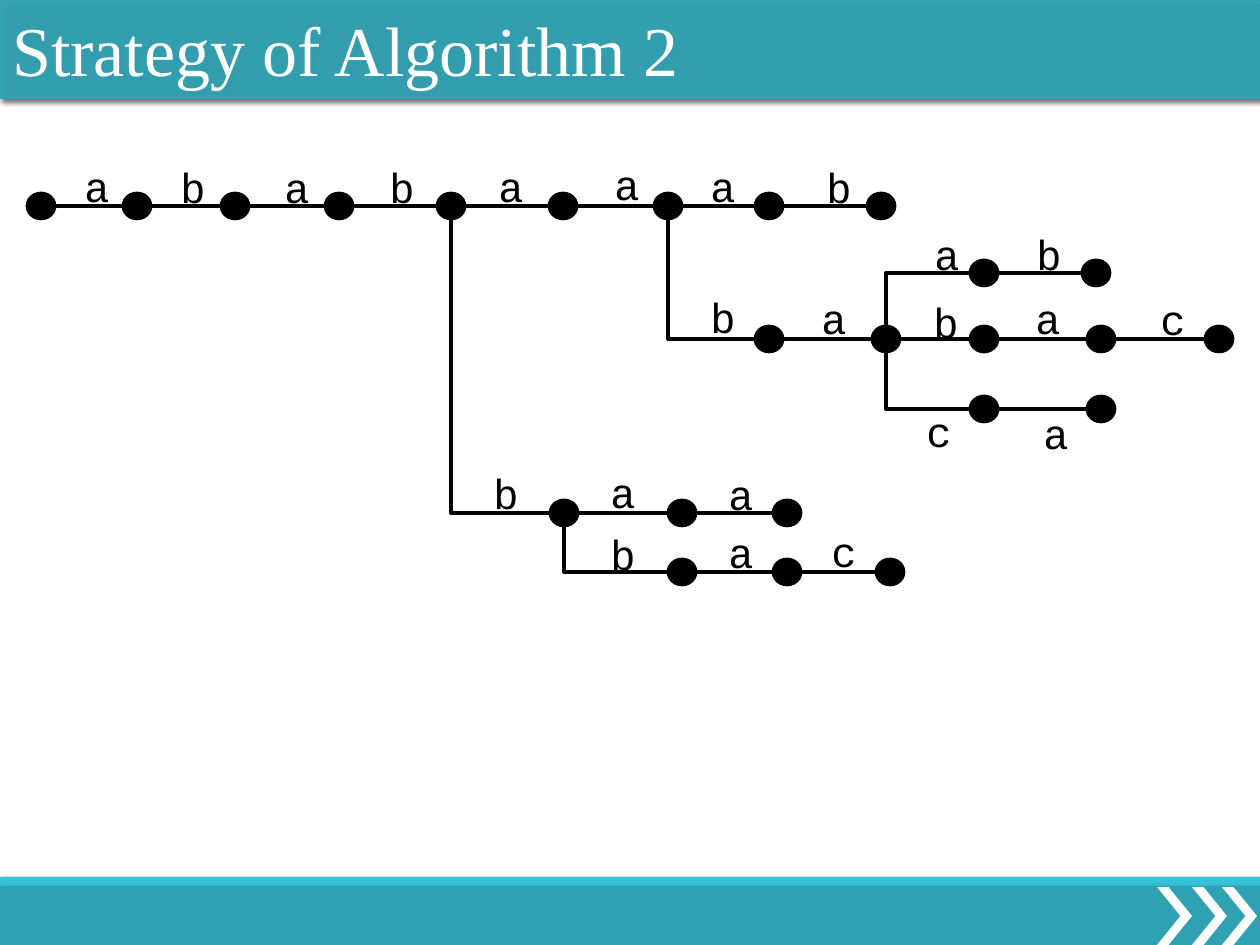
from lxml.etree import SubElement
from pptx import Presentation
from pptx.dml.color import RGBColor
from pptx.enum.shapes import MSO_CONNECTOR as CONN, MSO_SHAPE as SHAPE
from pptx.enum.text import MSO_ANCHOR as ANCHOR, PP_ALIGN as ALIGN
from pptx.oxml.ns import qn
from pptx.util import Pt

W, H = 1260, 945
NODE_W, NODE_H = 29, 27
TEAL, CYAN, WHITE, BLACK = "2EA2B3", "35C1D7", "FFFFFF", "000000"

BRANCHES = [
    ((21, 56), 56, [("a", 117, 52, 4), ("b", 215, 148, 5), ("a", 319, 252, 5),
                    ("b", 431, 357, 5), ("a", 543, 466, 4), ("a", 648, 582, 2),
                    ("a", 749, 678, 4), ("b", 861, 794, 5)]),
    ((648, 56), 189, [("b", 749, 678, 135), ("a", 866, 789, 136), ("b", 964, 901, 140),
                      ("a", 1081, 1003, 136), ("c", 1199, 1128, 137)]),
    ((866, 189), 123, [("a", 964, 902, 72), ("b", 1076, 1004, 72)]),
    ((866, 189), 259, [("c", 964, 894, 249), ("a", 1081, 1011, 251)]),
    ((431, 56), 363, [("b", 544, 461, 311), ("a", 662, 578, 310), ("a", 767, 696, 312)]),
    ((544, 363), 422, [("b", 662, 578, 372), ("a", 767, 696, 370), ("c", 870, 799, 369)]),
]


def px(n):
    """Turn px into EMU."""
    return round(n * 914400 / 126)


def rgb(color):
    """Turn a hex string into a colour."""
    return RGBColor.from_string(color)


def add_shape(s, kind, box, fill, line=None):
    """Add a flat preset shape."""
    sp = s.shapes.add_shape(kind, *map(px, box))
    sp.shadow.inherit = False
    sp.fill.solid()
    sp.fill.fore_color.rgb = rgb(fill)
    if line:
        sp.line.color.rgb = rgb(line)
        sp.line.width = Pt(1)
    else:
        sp.line.fill.background()
    return sp


def add_alpha(parent, percent):
    """Set the opacity of the colour inside a fill or shadow."""
    SubElement(parent.find(qn("a:srgbClr")), qn("a:alpha"), val=str(percent * 1000))


def add_shadow(sp):
    """Give a shape a soft shadow to the lower right."""
    effects = sp._element.spPr.find(qn("a:effectLst"))
    shadow = SubElement(effects, qn("a:outerShdw"), blurRad=str(Pt(3)), dist=str(Pt(2)),
                        dir="2700000", algn="tl", rotWithShape="0")
    SubElement(shadow, qn("a:srgbClr"), val=BLACK)
    add_alpha(shadow, 60)


def add_run(tf, text, size, font, color):
    """Add a run to the first paragraph."""
    p = tf.paragraphs[0]
    p.alignment = ALIGN.LEFT
    r = p.add_run()
    r.text = text
    r.font.size = Pt(size)
    r.font.name = font
    r.font.color.rgb = rgb(color)


def add_edge(s, start, end):
    """Join two points, with a corner when their heights differ."""
    bent = start[1] != end[1]
    kind = CONN.ELBOW if bent else CONN.STRAIGHT
    edge = s.shapes.add_connector(kind, *map(px, (*end, *start)))
    edge.line.color.rgb = rgb(BLACK)
    edge.line.width = Pt(2.25)
    sp_pr = edge._element.spPr
    SubElement(sp_pr, qn("a:effectLst"))
    if bent:
        sp_pr.find(qn("a:prstGeom")).set("prst", "bentConnector2")


def add_node(s, x, y):
    """Add a dot centred on a point."""
    box = (x - NODE_W / 2, y - NODE_H / 2, NODE_W, NODE_H)
    add_shape(s, SHAPE.OVAL, box, BLACK, BLACK)


def add_label(s, x, y, text):
    """Add the letter of an edge."""
    tf = s.shapes.add_textbox(*map(px, (x, y, 50, 63))).text_frame
    tf.word_wrap = False
    add_run(tf, text, 24, "Courier New", BLACK)


def add_tree(s, left, top):
    """Draw the tree of letters branch by branch."""
    root_x, root_y = BRANCHES[0][0]
    add_node(s, left + root_x, top + root_y)
    for (x, y), row, steps in BRANCHES:
        start = left + x, top + y
        for letter, node_x, label_x, label_y in steps:
            end = left + node_x, top + row
            add_edge(s, start, end)
            add_node(s, *end)
            add_label(s, left + label_x, top + label_y, letter)
            start = end


def add_footer(s, left, top, width, height):
    """Draw the bottom bars and chevrons."""
    strip = 10
    add_shadow(add_shape(s, SHAPE.RECTANGLE, (left, top, width, 30), CYAN))
    bar = (left, top + strip, width, height - strip)
    add_shadow(add_shape(s, SHAPE.RECTANGLE, bar, TEAL, TEAL))
    for offset in (103, 68, 38):
        box = (left + width - offset, top + strip, 35, height - strip)
        add_shape(s, SHAPE.CHEVRON, box, WHITE).adjustments[0] = 0.67


def add_title(s, left, top, width, height):
    """Draw the title bar."""
    sp = add_shape(s, SHAPE.RECTANGLE, (left, top, width, height), TEAL, TEAL)
    add_alpha(sp._element.spPr.find(qn("a:solidFill")), 92)
    add_shadow(sp)
    tf = sp.text_frame
    tf.word_wrap = True
    tf.vertical_anchor = ANCHOR.TOP
    add_run(tf, "Strategy of Algorithm 2", 40, "Times New Roman", WHITE)


def main():
    """Build the slide."""
    prs = Presentation()
    prs.slide_width, prs.slide_height = px(W), px(H)
    s = prs.slides.add_slide(prs.slide_layouts[6])
    add_footer(s, 0, 877, W, 68)
    add_tree(s, 20, 150)
    add_title(s, 0, 0, W, 98)
    prs.save("out.pptx")


if __name__ == "__main__":
    main()
